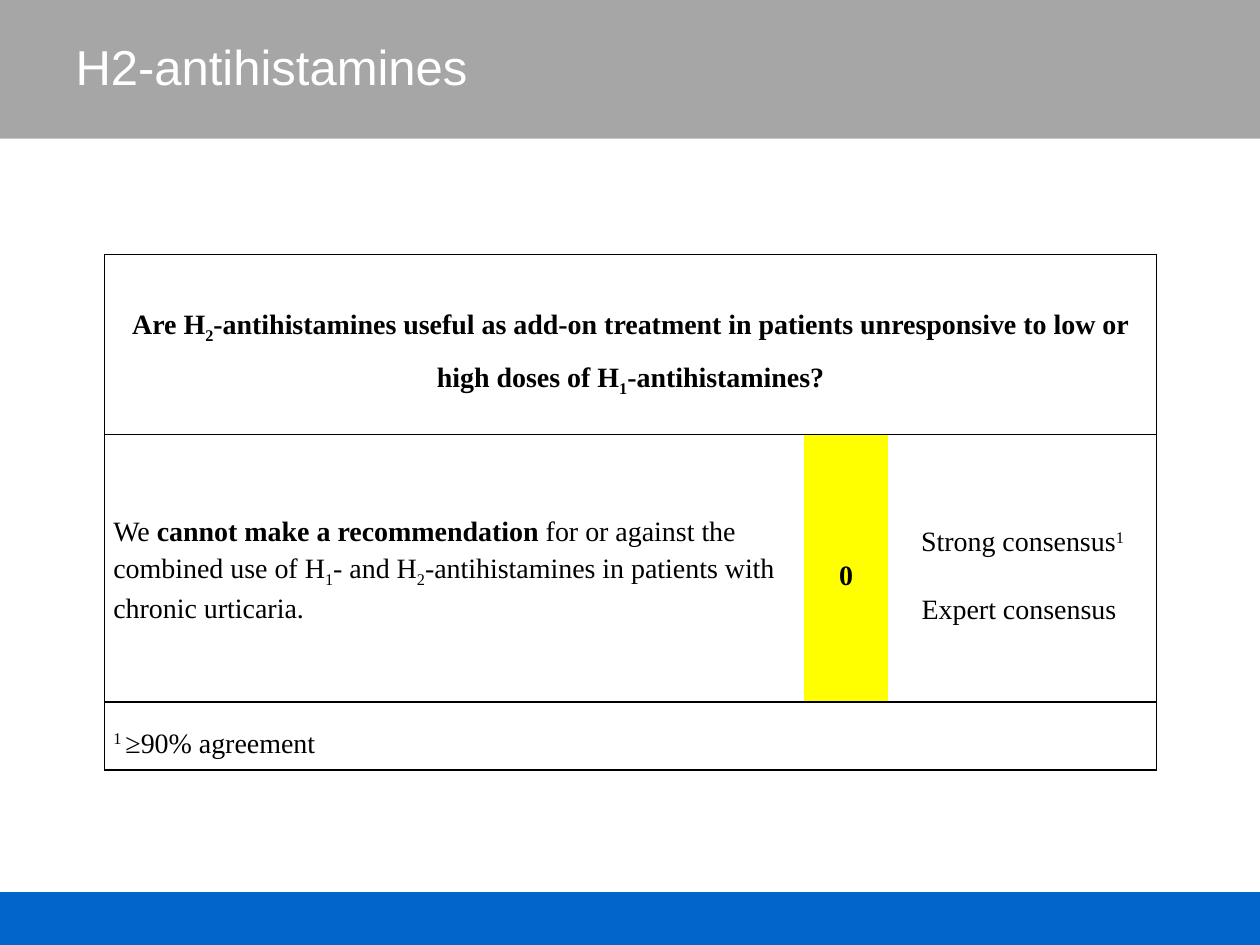
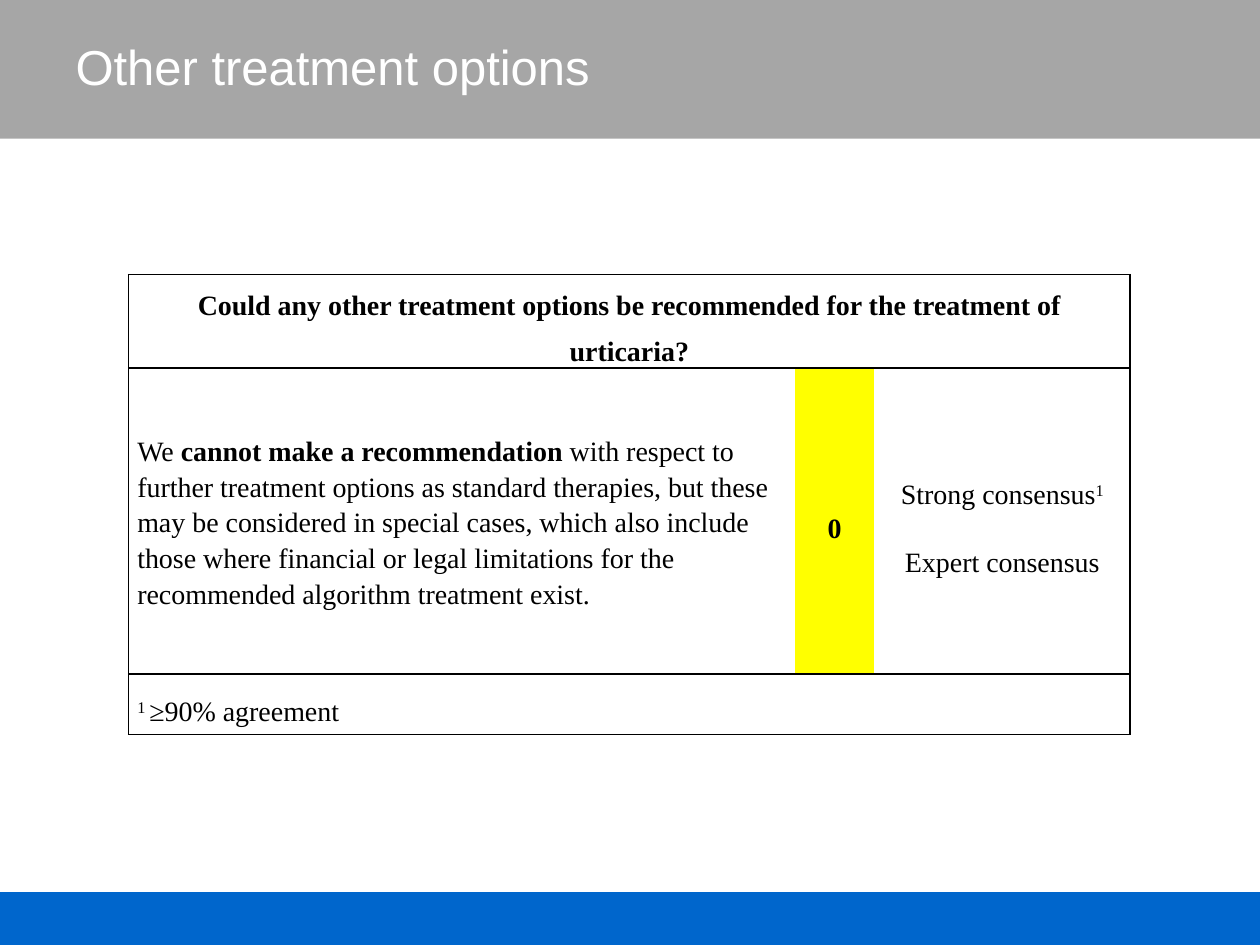
from lxml import etree
from pptx import Presentation
from pptx.dml.color import RGBColor
from pptx.enum.shapes import MSO_SHAPE
from pptx.enum.text import MSO_ANCHOR, MSO_AUTO_SIZE, PP_ALIGN
from pptx.oxml.ns import qn
from pptx.util import Inches, Pt

LEFT, CENTER, JUSTIFY = PP_ALIGN.LEFT, PP_ALIGN.CENTER, PP_ALIGN.JUSTIFY
MIDDLE = MSO_ANCHOR.MIDDLE
RECTANGLE = MSO_SHAPE.RECTANGLE
NO_AUTOFIT = MSO_AUTO_SIZE.NONE

COLORS = {
    "header": "A6A6A6",
    "footer": "0066CC",
    "title": "FFFFFF",
    "text": "000000",
    "border": "000000",
    "grade": "FFFF00",
}
TITLE_FONT, TABLE_FONT = "Arial", "Times New Roman"
SUBSCRIPT, SUPERSCRIPT = -25000, 30000
BANDS = [("header", 0, 1.1), ("footer", 7.08, 0.42)]

SUB_1 = ("1", SUBSCRIPT)
SUB_2 = ("2", SUBSCRIPT)
STRONG_CONSENSUS = ["Strong consensus", ("1", SUPERSCRIPT)]
FOOTNOTE = [("1 ", SUPERSCRIPT), "≥90% agreement"]
NO_RECOMMENDATION = ("cannot make a recommendation", "bold")

STYLES = {
    "question": dict(align=CENTER, spacing=1.5, before=6, after=6, bold=True),
    "statement": dict(align=LEFT, spacing=1.15, before=6, after=6, bold=False),
    "grade": dict(align=CENTER, spacing=1.5, before=0, after=8, bold=True),
    "consensus": dict(align=CENTER, spacing=1.5, before=6, after=6, bold=False),
    "footnote": dict(align=JUSTIFY, spacing=1.5, before=3, after=3, bold=False),
}

SLIDES = [
    {
        "title": "H2-antihistamines",
        "origin": (0.83, 2.02),
        "columns": [5.55, 0.67, 2.13],
        "rows": [1.43, 2.12, 0.54],
        "question": [
            "Are H", SUB_2,
            "-antihistamines useful as add-on treatment in patients "
            "unresponsive to low or high doses of H", SUB_1,
            "-antihistamines?",
        ],
        "statement": [
            "We ", NO_RECOMMENDATION,
            " for or against the combined use of H", SUB_1, "- and H", SUB_2,
            "-antihistamines in patients with chronic urticaria.",
        ],
        "consensus": [STRONG_CONSENSUS, ["Expert consensus "]],
    },
    {
        "title": "Other treatment options",
        "origin": (1.02, 2.18),
        "columns": [5.29, 0.63, 2.03],
        "rows": [0.63, 2.43, 0.48],
        "question": [
            "Could any other treatment options be recommended "
            "for the treatment of urticaria?",
        ],
        "statement": [
            "We ", NO_RECOMMENDATION,
            " with respect to further treatment options as standard therapies, "
            "but these may be considered in special cases, which also include "
            "those where financial or legal limitations for the recommended "
            "algorithm treatment exist.",
        ],
        "consensus": [STRONG_CONSENSUS, ["Expert consensus"]],
    },
]


def color(name):
    return RGBColor.from_string(COLORS[name])


def add_run(paragraph, text, font_name, size, color_name, bold=False):
    run = paragraph.add_run()
    run.text = text
    run.font.name = font_name
    run.font.size = Pt(size)
    run.font.bold = bold
    run.font.color.rgb = color(color_name)
    return run


def add_bands(slide, layout):
    for name, top, height in BANDS:
        band = slide.shapes.add_shape(
            RECTANGLE, 0, Inches(top), Inches(10), Inches(height))
        band.shadow.inherit = False
        band.fill.solid()
        band.fill.fore_color.rgb = color(name)
        band.line.fill.background()
        layout.shapes.element.insert(2, band.element)


def set_title(slide, text):
    title = slide.shapes.title
    title.left, title.top = Inches(0.5), Inches(0.22)
    title.width, title.height = Inches(9), Inches(0.61)
    frame = title.text_frame
    frame.auto_size = NO_AUTOFIT
    frame.vertical_anchor = MIDDLE
    frame.paragraphs[0].alignment = LEFT
    add_run(frame.paragraphs[0], text, TITLE_FONT, 28, "title")


def set_borders(cell, visible_sides):
    properties = cell._tc.get_or_add_tcPr()
    for index, side in enumerate("LRTB"):
        line = etree.Element(qn(f"a:ln{side}"), w=str(Pt(1)))
        if side in visible_sides:
            fill = etree.SubElement(line, qn("a:solidFill"))
            etree.SubElement(fill, qn("a:srgbClr"), val=COLORS["border"])
        else:
            etree.SubElement(line, qn("a:noFill"))
        properties.insert(index, line)


def fill_cell(cell, paragraphs, style_name):
    style = STYLES[style_name]
    frame = cell.text_frame
    for index, runs in enumerate(paragraphs):
        paragraph = frame.add_paragraph() if index else frame.paragraphs[0]
        paragraph.alignment = style["align"]
        paragraph.line_spacing = style["spacing"]
        paragraph.space_before = Pt(style["before"])
        paragraph.space_after = Pt(style["after"])
        for item in runs:
            text, effect = (item, None) if isinstance(item, str) else item
            bold = style["bold"] or effect == "bold"
            run = add_run(paragraph, text, TABLE_FONT, 16, "text", bold)
            if effect in (SUBSCRIPT, SUPERSCRIPT):
                run._r.get_or_add_rPr().set("baseline", str(effect))


def add_recommendation_table(slide, content):
    columns, rows = content["columns"], content["rows"]
    left, top = content["origin"]
    table = slide.shapes.add_table(
        len(rows), len(columns), Inches(left), Inches(top),
        Inches(sum(columns)), Inches(sum(rows))).table
    table.first_row = table.horz_banding = False
    for column, width in zip(table.columns, columns):
        column.width = Inches(width)
    for row, height in zip(table.rows, rows):
        row.height = Inches(height)

    for row in table.rows:
        for cell, sides in zip(row.cells, ("LTB", "TB", "RTB")):
            cell.vertical_anchor = MIDDLE
            cell.margin_left = cell.margin_right = Inches(0.07)
            cell.margin_top = cell.margin_bottom = 0
            cell.fill.background()
            set_borders(cell, sides)
    for index in (0, 2):
        table.cell(index, 0).merge(table.cell(index, 2))
        set_full = table.cell(index, 0)._tc.get_or_add_tcPr()
        for line in set_full.findall(qn("a:lnL")) + set_full.findall(qn("a:lnR")) \
                + set_full.findall(qn("a:lnT")) + set_full.findall(qn("a:lnB")):
            set_full.remove(line)
        set_borders(table.cell(index, 0), "LRTB")

    grade = table.cell(1, 1)
    grade.fill.solid()
    grade.fill.fore_color.rgb = color("grade")
    fill_cell(table.cell(0, 0), [content["question"]], "question")
    fill_cell(table.cell(1, 0), [content["statement"]], "statement")
    fill_cell(grade, [["0"]], "grade")
    fill_cell(table.cell(1, 2), content["consensus"], "consensus")
    fill_cell(table.cell(2, 0), [FOOTNOTE], "footnote")


def main():
    presentation = Presentation()
    presentation.slide_width, presentation.slide_height = Inches(10), Inches(7.5)
    layout = presentation.slide_layouts[5]
    for index, content in enumerate(SLIDES):
        slide = presentation.slides.add_slide(layout)
        if index == 0:
            add_bands(slide, layout)
        set_title(slide, content["title"])
        add_recommendation_table(slide, content)
    presentation.save("out.pptx")


if __name__ == "__main__":
    main()
